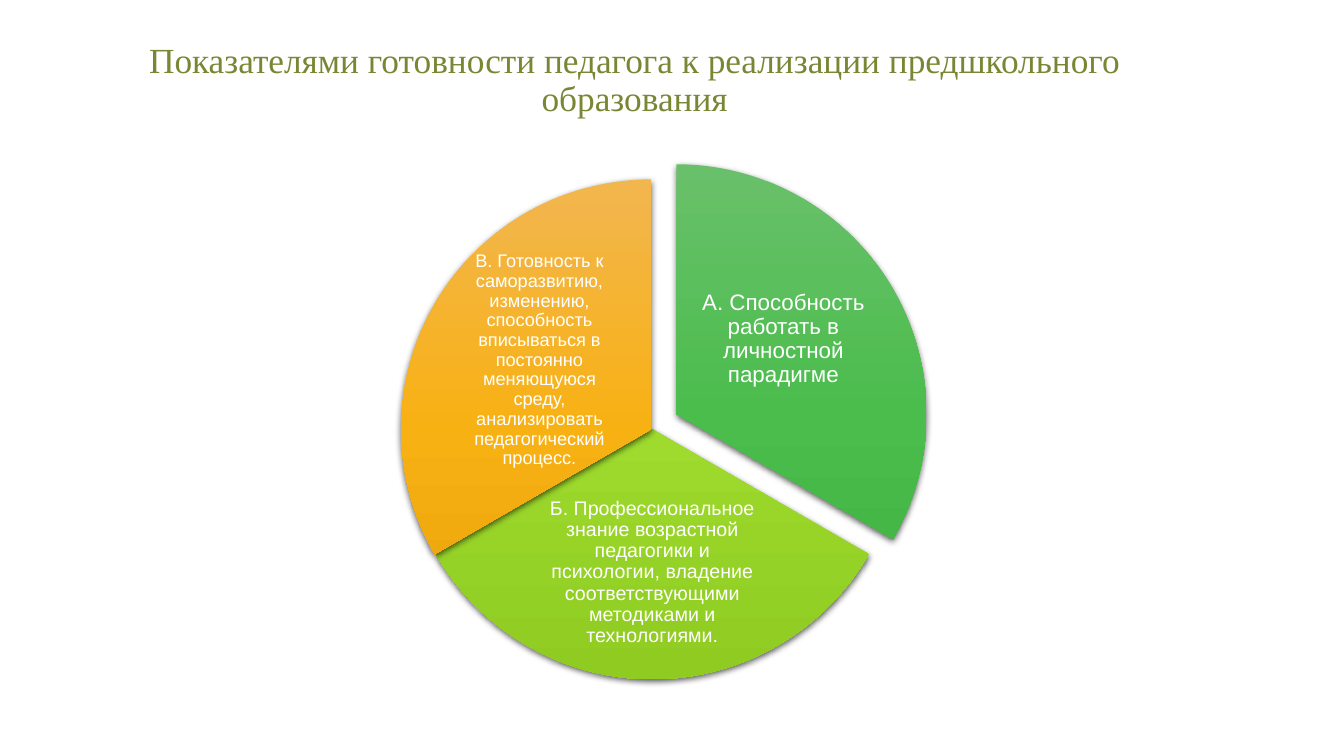
from dataclasses import dataclass

from lxml import etree
from pptx import Presentation
from pptx.dml.color import RGBColor
from pptx.enum.shapes import MSO_SHAPE
from pptx.enum.text import MSO_ANCHOR, PP_ALIGN
from pptx.oxml import parse_xml
from pptx.oxml.ns import nsdecls, qn
from pptx.util import Inches, Pt


@dataclass(frozen=True)
class Theme:
    title_font: str = "Times New Roman"
    label_font: str = "Arial"
    title_color: str = "798734"
    label_color: str = "FFFFFF"
    shadow_color: str = "000000"
    green: tuple = ("69C06A", "4BBD4D", "3DAE3F")
    lime: tuple = ("A6D959", "9EDB2E", "8FCB21")
    orange: tuple = ("F2B64F", "F8B113", "E5A008")
    title_size: float = 25.2
    large_label: int = 16
    medium_label: int = 14
    small_label: int = 13


theme = Theme()


def add_text(slide, box, text, font, size, color, anchor, inset=None):
    text_box = slide.shapes.add_textbox(*[Inches(length) for length in box])
    frame = text_box.text_frame
    frame.word_wrap = True
    frame.vertical_anchor = anchor
    if inset is not None:
        frame.margin_left = frame.margin_right = Inches(inset)
        frame.margin_top = frame.margin_bottom = Inches(inset)
    paragraph = frame.paragraphs[0]
    paragraph.alignment = PP_ALIGN.CENTER
    paragraph.line_spacing = 0.9
    run = paragraph.add_run()
    run.text = text
    run.font.name = font
    run.font.size = Pt(size)
    run.font.color.rgb = RGBColor.from_string(color)


def add_sector(slide, left, top, start, end, colors):
    diameter = Inches(4.96)
    shape = slide.shapes.add_shape(
        MSO_SHAPE.PIE, Inches(left), Inches(top), diameter, diameter)
    # Pie angles are in 60000ths of a degree, adjustments in 100000ths
    shape.adjustments[0] = start * 0.6
    shape.adjustments[1] = end * 0.6
    shape.line.fill.background()

    # Three-stop vertical gradient
    stops = "".join(
        f'<a:gs pos="{index * 50000}"><a:srgbClr val="{color}"/></a:gs>'
        for index, color in enumerate(colors))
    gradient = parse_xml(
        f'<a:gradFill {nsdecls("a")} rotWithShape="1"><a:gsLst>{stops}</a:gsLst>'
        '<a:lin ang="5400000" scaled="0"/></a:gradFill>')
    properties = shape.element.spPr
    properties.find(qn("a:prstGeom")).addnext(gradient)

    # Soft shadow below the sector
    shape.shadow.inherit = False
    shadow = etree.SubElement(
        properties.find(qn("a:effectLst")), qn("a:outerShdw"),
        blurRad=str(Pt(4.5)), dist=str(Pt(1.5)), dir="5400000",
        algn="ctr", rotWithShape="0")
    color = etree.SubElement(shadow, qn("a:srgbClr"), val=theme.shadow_color)
    etree.SubElement(color, qn("a:alpha"), val="63000")


presentation = Presentation()
presentation.slide_width = Inches(13.33)
presentation.slide_height = Inches(7.5)
slide = presentation.slides.add_slide(presentation.slide_layouts[6])

# Title
add_text(slide, (0.92, 0.4, 10.75, 0.83),
         "Показателями готовности педагога к реализации предшкольного образования",
         theme.title_font, theme.title_size, theme.title_color, MSO_ANCHOR.BOTTOM)

# Sectors: left, top, start angle, colours, label box, label size, label
sectors = [
    (4.23, 1.63, 270, theme.green, (6.93, 2.54, 1.68, 1.65), theme.large_label,
     "А. Способность работать в личностной парадигме"),
    (3.99, 1.78, 30, theme.lime, (5.35, 4.91, 2.24, 1.54), theme.medium_label,
     "Б. Профессиональное знание возрастной педагогики и психологии, "
     "владение соответствующими методиками и технологиями."),
    (3.98, 1.78, 150, theme.orange, (4.51, 2.75, 1.68, 1.65), theme.small_label,
     "В. Готовность к саморазвитию, изменению, способность вписываться в "
     "постоянно меняющуюся среду, анализировать педагогический процесс."),
]
for left, top, start, colors, label_box, label_size, label in sectors:
    add_sector(slide, left, top, start, (start + 120) % 360, colors)
    add_text(slide, label_box, label, theme.label_font, label_size,
             theme.label_color, MSO_ANCHOR.MIDDLE, inset=0.02)

presentation.save("out.pptx")
